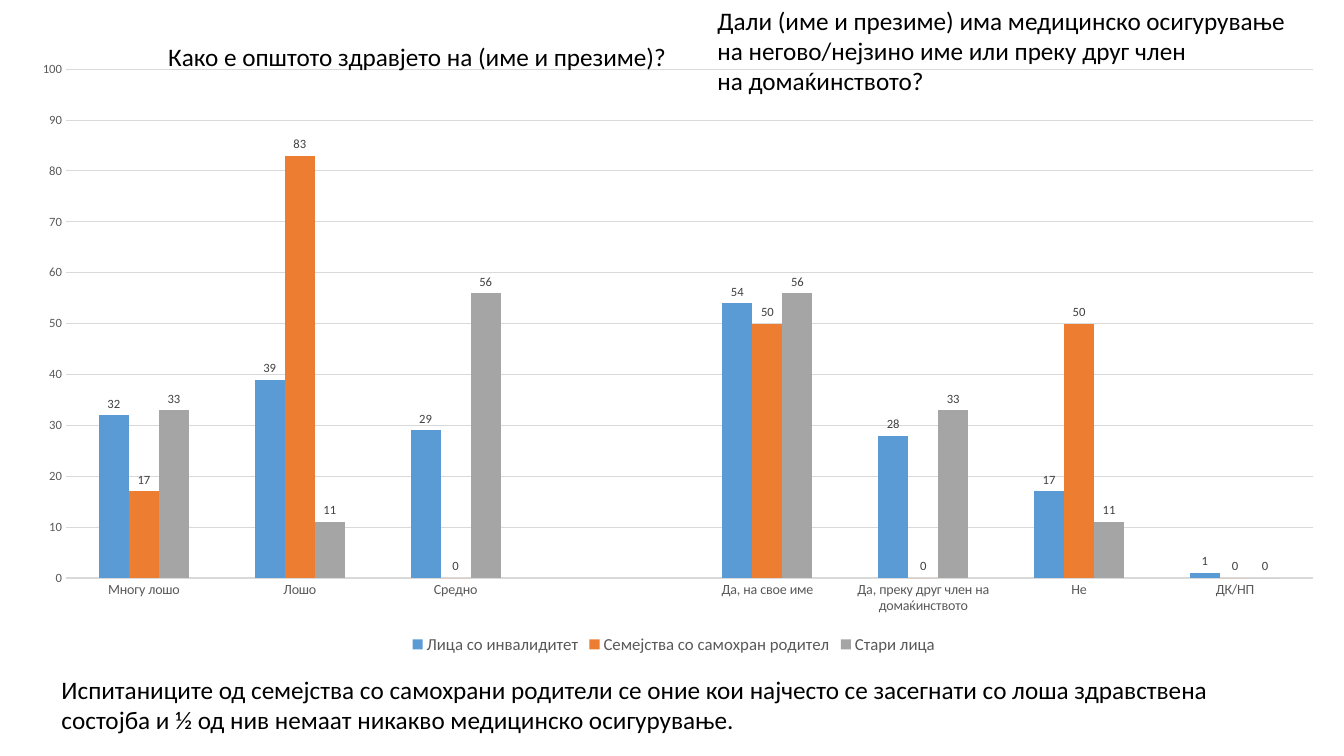
from dataclasses import dataclass

from pptx import Presentation
from pptx.chart.data import CategoryChartData as Data
from pptx.dml.color import RGBColor as Rgb
from pptx.enum.chart import XL_CHART_TYPE as Kind
from pptx.enum.chart import XL_LABEL_POSITION as Spot
from pptx.enum.chart import XL_LEGEND_POSITION as Side
from pptx.enum.chart import XL_TICK_MARK as Tick
from pptx.enum.text import MSO_AUTO_SIZE as Fit
from pptx.oxml import parse_xml
from pptx.oxml.ns import nsdecls
from pptx.util import Cm, Pt


@dataclass(frozen=True)
class Theme:
    face: str = "Calibri"
    ink: str = "000000"
    grey: str = "595959"
    mark: str = "404040"
    rule: str = "D9D9D9"
    body: int = 18
    key: int = 12
    cat: int = 10
    small: int = 9
    hair: float = 0.75


@dataclass(frozen=True)
class Box:
    left: float
    top: float
    width: float
    height: float

    def place(self) -> tuple:
        return Cm(self.left), Cm(self.top), Cm(self.width), Cm(self.height)


@dataclass(frozen=True)
class Group:
    name: str
    color: str
    vals: tuple


@dataclass(frozen=True)
class Note:
    box: Box
    lines: tuple


LOOK = Theme()
FRAME = Box(0.51, 1.27, 32.94, 15.32)
PLOT = {"x": 0.035, "y": 0.031, "w": 0.954, "h": 0.837}

CATS = ("Многу лошо", "Лошо", "Средно", "", "Да, на свое име",
        "Да, преку друг член на домаќинството", "Не", "ДК/НП")

GROUPS = (
    Group("Лица со инвалидитет", "5B9BD5", (32, 39, 29, None, 54, 28, 17, 1)),
    Group("Семејства со самохран родител", "ED7D31", (17, 83, 0, None, 50, 0, 50, 0)),
    Group("Стари лица", "A5A5A5", (33, 11, 56, None, 56, 33, 11, 0)),
)

NOTES = (
    Note(Box(3.99, 0.91, 13.56, 1.02),
         ("Како е општото здравјето на (име и презиме)?",)),
    Note(Box(17.83, 0, 14.99, 2.57),
         ("Дали (име и презиме) има медицинско осигурување",
          "на негово/нејзино име или преку друг член",
          "на домаќинството?")),
    Note(Box(1.3, 16.87, 29.9, 1.8),
         ("Испитаниците од семејства со самохрани родители се оние кои "
          "најчесто се засегнати со лоша здравствена",
          "состојба и ½ од нив немаат никакво медицинско осигурување.")),
)


def style(font, size: int, color: str) -> None:
    font.name = LOOK.face
    font.size = Pt(size)
    font.color.rgb = Rgb.from_string(color)


def rule(line) -> None:
    line.color.rgb = Rgb.from_string(LOOK.rule)
    line.width = Pt(LOOK.hair)


def write(frame, text: str, *, size: int = LOOK.body, color: str = LOOK.ink) -> None:
    frame.text = text
    for para in frame.paragraphs:
        for run in para.runs:
            style(run.font, size, color)


def add_note(slide, note: Note) -> None:
    frame = slide.shapes.add_textbox(*note.box.place()).text_frame
    frame.word_wrap = False
    frame.auto_size = Fit.SHAPE_TO_FIT_TEXT
    write(frame, "\n".join(note.lines))


def set_plot(chart) -> None:
    area = chart._chartSpace.chart.plotArea
    for old in area.findall("{*}layout"):
        area.remove(old)
    modes = "".join(f'<c:{key}Mode val="edge"/>' for key in "xy")
    sizes = "".join(f'<c:{key} val="{val}"/>' for key, val in PLOT.items())
    area.insert(0, parse_xml(
        f'<c:layout {nsdecls("c")}><c:manualLayout><c:layoutTarget val="inner"/>'
        f"{modes}{sizes}</c:manualLayout></c:layout>"))


def set_axes(chart) -> None:
    cat, val = chart.category_axis, chart.value_axis
    for axis, size in ((cat, LOOK.cat), (val, LOOK.small)):
        axis.major_tick_mark = axis.minor_tick_mark = Tick.NONE
        style(axis.tick_labels.font, size, LOOK.grey)
    rule(cat.format.line)
    val.format.line.fill.background()
    val.minimum_scale, val.maximum_scale, val.major_unit = 0, 100, 10
    val.has_major_gridlines = True
    rule(val.major_gridlines.format.line)


def set_bars(chart) -> None:
    plot = chart.plots[0]
    plot.gap_width, plot.overlap = 219, 0
    plot.vary_by_categories = False
    for bars, group in zip(plot.series, GROUPS):
        bars.format.fill.solid()
        bars.format.fill.fore_color.rgb = Rgb.from_string(group.color)
        bars.invert_if_negative = False
        tags = bars.data_labels
        tags.show_value = True
        tags.position = Spot.OUTSIDE_END
        style(tags.font, LOOK.small, LOOK.mark)


def add_graph(slide) -> None:
    data = Data()
    data.categories = CATS
    for group in GROUPS:
        data.add_series(group.name, group.vals)
    chart = slide.shapes.add_chart(Kind.COLUMN_CLUSTERED, *FRAME.place(), data).chart
    style(chart.font, LOOK.cat, LOOK.ink)
    chart.has_title = False
    chart.has_legend = True
    chart.legend.position = Side.BOTTOM
    chart.legend.include_in_layout = False
    style(chart.legend.font, LOOK.key, LOOK.grey)
    set_plot(chart)
    set_axes(chart)
    set_bars(chart)


def main() -> None:
    deck = Presentation()
    deck.slide_width, deck.slide_height = Cm(33.87), Cm(19.05)
    slide = deck.slides.add_slide(deck.slide_layouts.get_by_name("Blank"))
    add_graph(slide)
    for note in NOTES:
        add_note(slide, note)
    deck.save("out.pptx")


if __name__ == "__main__":
    main()
